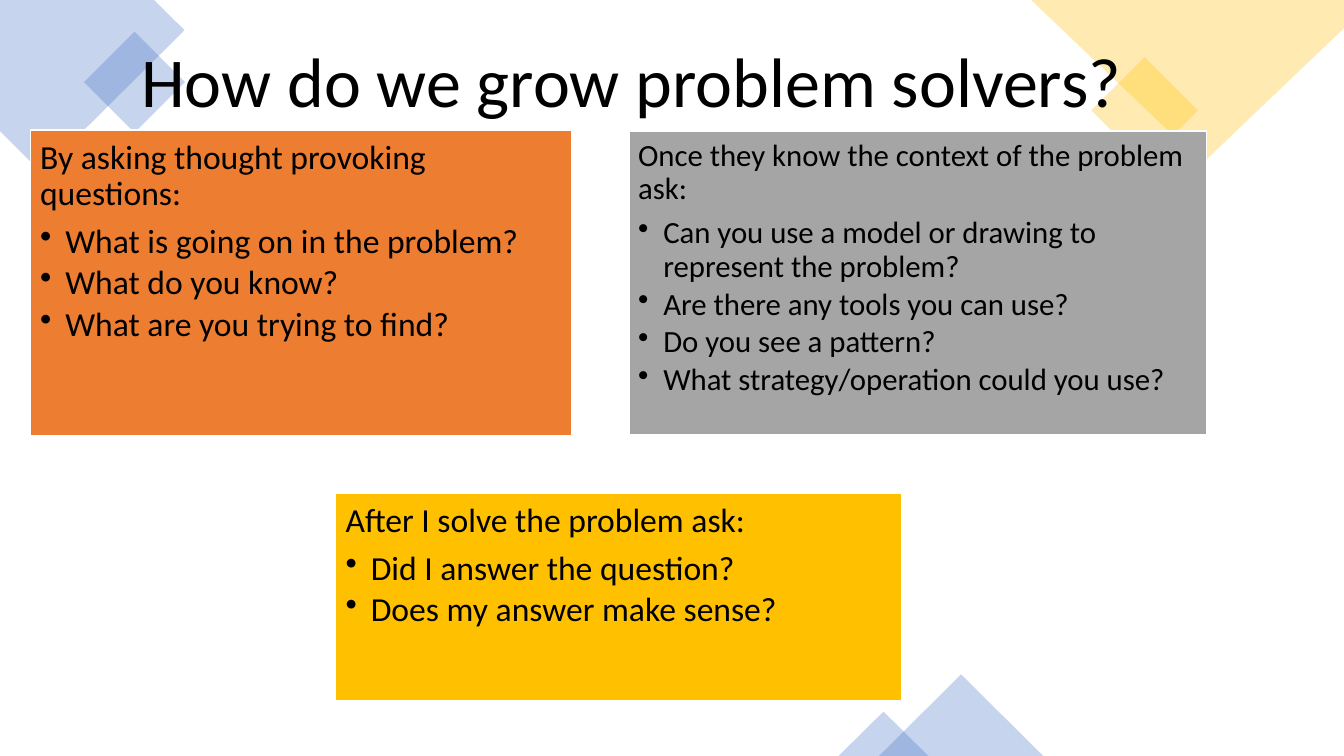
import lxml.etree
import pptx
import pptx.dml.color
import pptx.enum.shapes
import pptx.enum.text
import pptx.oxml.ns
import pptx.util

COLORS = {
    "blue": "4472C4",
    "gold": "FFC000",
    "orange": "ED7D31",
    "gray": "A5A5A5",
    "white": "FFFFFF",
    "black": "000000",
}
SHAPES = pptx.enum.shapes.MSO_SHAPE
ANCHOR = pptx.enum.text.MSO_ANCHOR
ALIGN = pptx.enum.text.PP_ALIGN
FONT = "Calibri"

presentation = pptx.Presentation()
presentation.slide_width = pptx.util.Inches(13.33)
presentation.slide_height = pptx.util.Inches(7.5)
column = presentation.slide_width / 80
row = presentation.slide_height / 45
slide = presentation.slides.add_slide(presentation.slide_layouts[5])


def grid(*values):
    return [round(value * (row if index % 2 else column)) for index, value in enumerate(values)]


def paint(shape, color, alpha=None):
    shape.shadow.inherit = False
    shape.fill.solid()
    shape.fill.fore_color.rgb = pptx.dml.color.RGBColor.from_string(COLORS[color])
    if alpha:
        shape.line.fill.background()
        fill_color = shape._element.spPr.find(".//" + pptx.oxml.ns.qn("a:srgbClr"))
        transparency = lxml.etree.SubElement(fill_color, pptx.oxml.ns.qn("a:alpha"))
        transparency.set("val", str(alpha * 1000))


corners = [
    ("blue", [(9.18, 0), (0, 0), (0, 7.8), (2.46, 10.26), (10.98, 1.8)]),
    ("gold", [(80, 0), (61.38, 0), (71.58, 9.72), (80, 1.68)]),
]
for color, points in corners:
    vertices = [grid(*point) for point in points]
    builder = slide.shapes.build_freeform(*vertices[0])
    builder.add_line_segments(vertices[1:], close=True)
    paint(builder.convert_to_shape(), color, 30)

accents = [
    (SHAPES.RECTANGLE, "blue", (5.88, 2.76, 4.26, 4.26), 315),
    (SHAPES.RECTANGLE, "gold", (65.88, 4.32, 4.5, 4.5), 315),
    (SHAPES.ISOSCELES_TRIANGLE, "blue", (52.32, 40.14, 9.78, 4.86), 0),
    (SHAPES.ISOSCELES_TRIANGLE, "blue", (49.92, 42.36, 5.34, 2.64), 0),
]
for kind, color, box, rotation in accents:
    accent = slide.shapes.add_shape(kind, *grid(*box))
    accent.rotation = rotation
    paint(accent, color, 30)

title = slide.shapes.title
slide.shapes._spTree.append(title._element)
title.left, title.top, title.width, title.height = grid(7.8, 2.52, 61.38, 7.86)
title.text_frame.text = "How do we grow problem solvers?"
title.text_frame.auto_size = pptx.enum.text.MSO_AUTO_SIZE.NONE
title.text_frame.vertical_anchor = ANCHOR.TOP
heading = title.text_frame.paragraphs[0]
heading.alignment = ALIGN.LEFT
heading.line_spacing = 0.9
heading.runs[0].font.size = pptx.util.Pt(50)
heading.runs[0].font.name = FONT
heading.runs[0].font.color.rgb = pptx.dml.color.RGBColor.from_string(COLORS["black"])

panels = [
    ("orange", (1.8, 7.74, 32.22, 18.18), 24, 0.1, [
        "By asking thought provoking questions:",
        "What is going on in the problem?",
        "What do you know?",
        "What are you trying to find?",
    ]),
    ("gray", (37.44, 7.8, 34.38, 18.06), 22, 0.09, [
        "Once they know the context of the problem ask:",
        "Can you use a model or drawing to represent the problem?",
        "Are there any tools you can use?",
        "Do you see a pattern?",
        "What strategy/operation could you use?",
    ]),
    ("gold", (19.98, 29.34, 33.72, 12.36), 24, 0.1, [
        "After I solve the problem ask:",
        "Did I answer the question?",
        "Does my answer make sense?",
    ]),
]
indent = pptx.util.Inches(0.25)
for color, box, size, inset, lines in panels:
    panel = slide.shapes.add_shape(SHAPES.RECTANGLE, *grid(*box))
    paint(panel, color)
    panel.line.color.rgb = pptx.dml.color.RGBColor.from_string(COLORS["white"])
    panel.line.width = pptx.util.Pt(1)
    frame = panel.text_frame
    frame.word_wrap = True
    frame.vertical_anchor = ANCHOR.TOP
    frame.margin_left = frame.margin_right = pptx.util.Inches(inset)
    frame.margin_top = frame.margin_bottom = pptx.util.Inches(inset)
    frame.text = "\n".join(lines)
    for index, paragraph in enumerate(frame.paragraphs):
        paragraph.alignment = ALIGN.LEFT
        paragraph.line_spacing = 0.9
        paragraph.space_after = pptx.util.Pt(size * (0.15 if index else 0.35))
        font = paragraph.runs[0].font
        font.size = pptx.util.Pt(size)
        font.name = FONT
        font.color.rgb = pptx.dml.color.RGBColor.from_string(COLORS["black"])
        if index:
            paragraph.level = 1
            properties = paragraph._p.get_or_add_pPr()
            properties.set("marL", str(indent))
            properties.set("indent", str(-indent))
            bullet = lxml.etree.SubElement(properties, pptx.oxml.ns.qn("a:buChar"))
            bullet.set("char", "•")

presentation.save("out.pptx")
